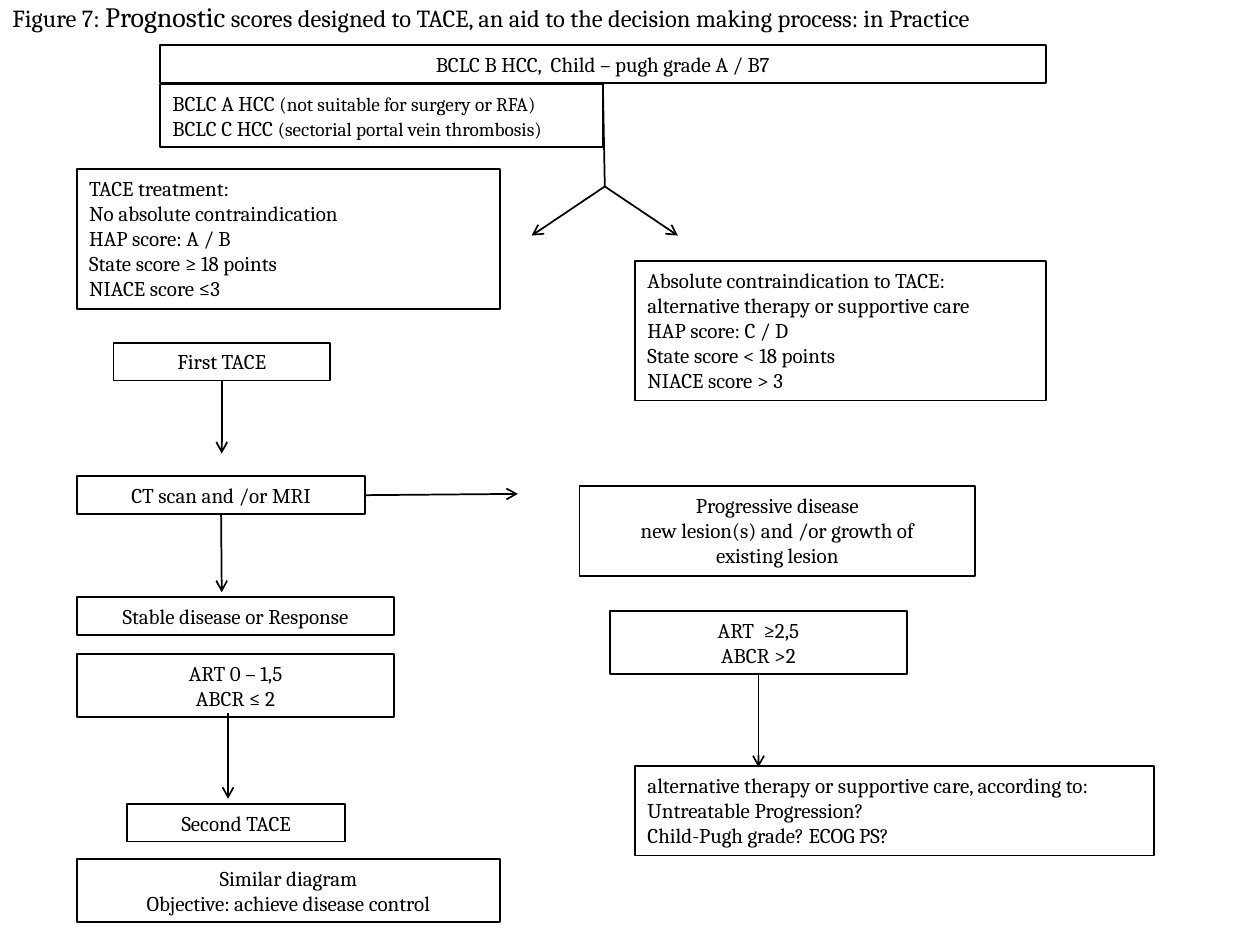
from dataclasses import dataclass

from lxml import etree
from pptx import Presentation
from pptx.dml.color import RGBColor
from pptx.enum.shapes import MSO_CONNECTOR, MSO_SHAPE
from pptx.enum.text import MSO_ANCHOR, MSO_AUTO_SIZE, PP_ALIGN
from pptx.oxml.ns import qn
from pptx.util import Inches, Pt

STRAIGHT = MSO_CONNECTOR.STRAIGHT
RECTANGLE = MSO_SHAPE.RECTANGLE
TOP = MSO_ANCHOR.TOP
GROW = MSO_AUTO_SIZE.SHAPE_TO_FIT_TEXT
LEFT, CENTER = PP_ALIGN.LEFT, PP_ALIGN.CENTER
BOTTOM_SIDE, RIGHT_SIDE = 2, 3


@dataclass(frozen=True)
class Theme:
    ink: RGBColor = RGBColor(0, 0, 0)
    font: str = "Cambria"
    title: Pt = Pt(14)
    emphasis: Pt = Pt(16)
    body: Pt = Pt(12)
    remark: Pt = Pt(11)
    line: Pt = Pt(1)


THEME = Theme()
# Box heights by number of text lines
HEIGHTS = {1: 0.3, 2: 0.5, 3: 0.71, 5: 1.11}


@dataclass(frozen=True)
class Box:
    left: float
    top: float
    width: float
    height: float

    def point(self, x, y):
        return Inches(self.left + x), Inches(self.top + y)


def write_lines(text_frame, lines, size, align):
    """Fill a frame; a line is a string or a list of (text, size) runs."""
    text_frame.word_wrap = True
    text_frame.auto_size = GROW
    text_frame.vertical_anchor = TOP
    for index, line in enumerate(lines):
        paragraph = text_frame.paragraphs[0] if index == 0 else text_frame.add_paragraph()
        paragraph.alignment = align
        paragraph.font.name = THEME.font
        paragraph.font.size = size
        paragraph.font.color.rgb = THEME.ink
        runs = [(line, None)] if isinstance(line, str) else line
        for text, run_size in runs:
            run = paragraph.add_run()
            run.text = text
            run.font.name = THEME.font
            run.font.size = run_size or size
            run.font.color.rgb = THEME.ink


def add_step(slide, box, x, y, width, lines, align=CENTER):
    """Add an outlined step whose height follows its number of lines."""
    shape = slide.shapes.add_shape(
        RECTANGLE, *box.point(x, y), Inches(width), Inches(HEIGHTS[len(lines)]))
    shape.shadow.inherit = False
    shape.fill.background()
    shape.line.color.rgb = THEME.ink
    shape.line.width = THEME.line
    write_lines(shape.text_frame, lines, THEME.body, align)
    return shape


def add_line(slide, box, start, end, source=None, side=BOTTOM_SIDE, arrow=True):
    """Draw a straight line, joined to a side of source when one is given."""
    connector = slide.shapes.add_connector(STRAIGHT, *box.point(*start), *box.point(*end))
    if source is not None:
        connector.begin_connect(source, side)
    connector.line.color.rgb = THEME.ink
    connector.line.width = THEME.line
    if arrow:
        line_xml = connector.line._get_or_add_ln()
        etree.SubElement(line_xml, qn("a:tailEnd"), type="arrow")
    etree.SubElement(connector._element.spPr, qn("a:effectLst"))


def add_title(slide, box):
    title = slide.shapes.add_textbox(
        *box.point(0, 0), Inches(box.width), Inches(box.height))
    runs = [
        ("Figure 7: ", THEME.title),
        ("Prognostic", THEME.emphasis),
        (" scores designed to TACE, an aid to the decision making process: in Practice",
         THEME.title),
    ]
    write_lines(title.text_frame, [runs], THEME.title, LEFT)


def add_eligibility(slide, box):
    """Add the eligible stages and the fork into the two branches."""
    header = add_step(slide, box, 0, 0, box.width,
                      ["BCLC B HCC,  Child – pugh grade A / B7"])
    stages = [
        [("BCLC A HCC ", THEME.body), ("(not suitable for surgery or RFA)", THEME.remark)],
        [("BCLC C HCC ", THEME.body), ("(sectorial portal vein thrombosis)", THEME.remark)],
    ]
    add_step(slide, box, 0, 0.31, box.width / 2, stages, LEFT)
    fork = (3.53, 1.12)
    add_line(slide, box, (box.width / 2, 0.3), fork, header, arrow=False)
    for offset in (-0.58, 0.58):
        add_line(slide, box, fork, (fork[0] + offset, 1.51))


def add_treatment_branch(slide, box):
    add_step(slide, box, 0, 0, box.width, [
        "TACE treatment:",
        "No absolute contraindication",
        "HAP score: A / B",
        "State score ≥ 18 points",
        "NIACE score ≤3",
    ], LEFT)
    first = add_step(slide, box, 0.29, 1.38, 1.72, ["First TACE"])
    scan = add_step(slide, box, 0, 2.44, 2.29, ["CT scan and /or MRI"])
    add_step(slide, box, 0, 3.4, 2.52, ["Stable disease or Response"])
    add_step(slide, box, 0, 3.85, 2.52, ["ART 0 – 1,5", "ABCR ≤ 2"])
    add_step(slide, box, 0.4, 5.04, 1.73, ["Second TACE"])
    add_step(slide, box, 0, 5.48, box.width,
             ["Similar diagram", "Objective: achieve disease control"])
    add_line(slide, box, (1.15, 1.68), (1.15, 2.26), first)
    add_line(slide, box, (1.15, 2.74), (1.15, 3.36), scan)
    add_line(slide, box, (2.29, 2.59), (3.5, 2.58), scan, RIGHT_SIDE)
    add_line(slide, box, (1.2, 4.32), (1.2, 5))


def add_alternative_branch(slide, box):
    add_step(slide, box, 0.44, 0, 3.26, [
        "Absolute contraindication to TACE:",
        "alternative therapy or supportive care",
        "HAP score: C / D",
        "State score < 18 points",
        "NIACE score > 3",
    ], LEFT)
    add_step(slide, box, 0, 1.79, 3.14, [
        "Progressive disease",
        "new lesion(s) and /or growth of",
        "existing lesion",
    ])
    scores = add_step(slide, box, 0.24, 2.78, 2.36, ["ART  ≥2,5", "ABCR >2"])
    add_step(slide, box, 0.44, 4.01, box.width - 0.44, [
        "alternative therapy or supportive care, according to:",
        "Untreatable Progression?",
        "Child-Pugh grade? ECOG PS?",
    ], LEFT)
    add_line(slide, box, (1.42, 3.28), (1.42, 4.02), scores)


def main():
    presentation = Presentation()
    presentation.slide_width = Inches(10)
    presentation.slide_height = Inches(7.5)
    slide = presentation.slides.add_slide(presentation.slide_layouts[6])
    add_title(slide, Box(0, -0.05, 9.99, 0.37))
    add_eligibility(slide, Box(1.27, 0.36, 7.03, 1.51))
    add_treatment_branch(slide, Box(0.61, 1.34, 3.36, 5.98))
    add_alternative_branch(slide, Box(4.6, 2.07, 4.56, 4.72))
    presentation.save("out.pptx")


if __name__ == "__main__":
    main()
